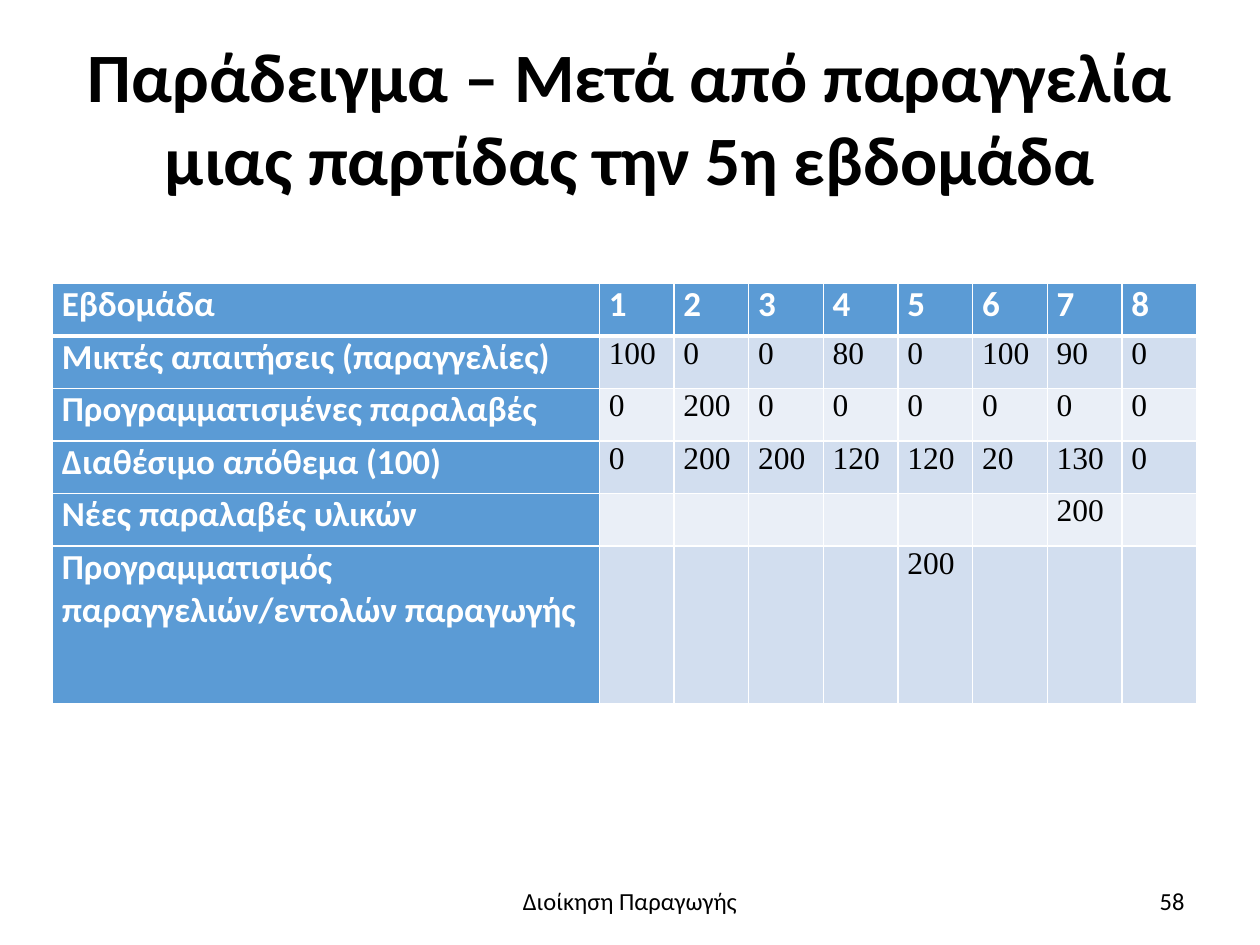
from lxml.etree import SubElement
from pptx import Presentation
from pptx.dml.color import RGBColor
from pptx.enum.text import MSO_ANCHOR, PP_ALIGN
from pptx.oxml.ns import qn
from pptx.util import Pt

BLACK = RGBColor(0x00, 0x00, 0x00)
WHITE = RGBColor(0xFF, 0xFF, 0xFF)
BLUE = RGBColor(0x5B, 0x9B, 0xD5)
BANDS = RGBColor(0xEA, 0xEF, 0xF7), RGBColor(0xD2, 0xDE, 0xEF)

TITLE = dict(name="Calibri", size=Pt(39.6), bold=True)
FOOT = dict(name="Calibri", size=Pt(14), bold=False)
LABEL = dict(name="Calibri", size=Pt(20), bold=True)
VALUE = dict(name="Times New Roman", size=Pt(18), bold=False)
INSET = dict(margin_left=Pt(5.4), margin_right=Pt(5.4), margin_top=0, margin_bottom=0)

ROWS = [
    ("Εβδομάδα", [1, 2, 3, 4, 5, 6, 7, 8]),
    ("Μικτές απαιτήσεις (παραγγελίες)", [100, 0, 0, 80, 0, 100, 90, 0]),
    ("Προγραμματισμένες παραλαβές", [0, 200, 0, 0, 0, 0, 0, 0]),
    ("Διαθέσιμο απόθεμα (100)", [0, 200, 200, 120, 120, 20, 130, 0]),
    ("Νέες παραλαβές υλικών", [""] * 6 + [200, ""]),
    ("Προγραμματισμός παραγγελιών/εντολών παραγωγής", [""] * 4 + [200] + [""] * 3),
]


def assign(item, values):
    for key, value in values.items():
        setattr(item, key, value)


def style(para, look, color, align):
    para.alignment = align
    assign(para.font, look)
    para.font.color.rgb = color


def add_text(slide, box, text, look, align):
    frame = slide.shapes.add_textbox(*map(Pt, box)).text_frame
    assign(frame, dict(word_wrap=True, vertical_anchor=MSO_ANCHOR.MIDDLE, text=text))
    style(frame.paragraphs[0], look, BLACK, align)


def add_edges(cell, row):
    props = cell._tc.get_or_add_tcPr()
    widths = dict(lnL=1, lnR=1, lnT=3 if row == 1 else 1, lnB=3 if row == 0 else 1)
    for index, (tag, width) in enumerate(widths.items()):
        line = props.makeelement(qn("a:" + tag), {"w": str(Pt(width))})
        fill = SubElement(line, qn("a:solidFill"))
        SubElement(fill, qn("a:srgbClr"), val=str(WHITE))
        props.insert(index, line)


def fill_cell(cell, row, col, text):
    head = row == 0 or col == 0
    cell.text = str(text)
    assign(cell, INSET)
    cell.fill.solid()
    cell.fill.fore_color.rgb = BLUE if head else BANDS[row % 2]
    look, color = (LABEL, WHITE) if head else (VALUE, BLACK)
    last = row == len(ROWS) - 1 and col == 0
    align = PP_ALIGN.LEFT if last else PP_ALIGN.JUSTIFY
    style(cell.text_frame.paragraphs[0], look, color, align)
    add_edges(cell, row)


def add_plan(slide, box):
    left, top, width, height = box
    count = len(ROWS[0][1])
    first, low = 312.5, 30
    table = slide.shapes.add_table(len(ROWS), count + 1, *map(Pt, box)).table
    for col, column in enumerate(table.columns):
        column.width = Pt((width - first) / count if col else first)
    for row, (label, values) in enumerate(ROWS):
        tall = height - low * (len(ROWS) - 1)
        table.rows[row].height = Pt(tall if row == len(ROWS) - 1 else low)
        for col, text in enumerate([label, *values]):
            fill_cell(table.cell(row, col), row, col, text)


def main():
    deck = Presentation()
    deck.slide_width, deck.slide_height = Pt(720), Pt(540)
    slide = deck.slides.add_slide(deck.slide_layouts[6])
    title = "Παράδειγμα – Μετά από παραγγελία μιας παρτίδας την 5η εβδομάδα"
    add_text(slide, (36, 21.6, 648, 90), title, TITLE, PP_ALIGN.CENTER)
    add_plan(slide, (30, 162, 654, 240))
    add_text(slide, (246, 500.5, 228, 28.75), "Διοίκηση Παραγωγής", FOOT, PP_ALIGN.CENTER)
    add_text(slide, (516, 500.5, 168, 28.75), "58", FOOT, PP_ALIGN.RIGHT)
    deck.save("out.pptx")


if __name__ == "__main__":
    main()
